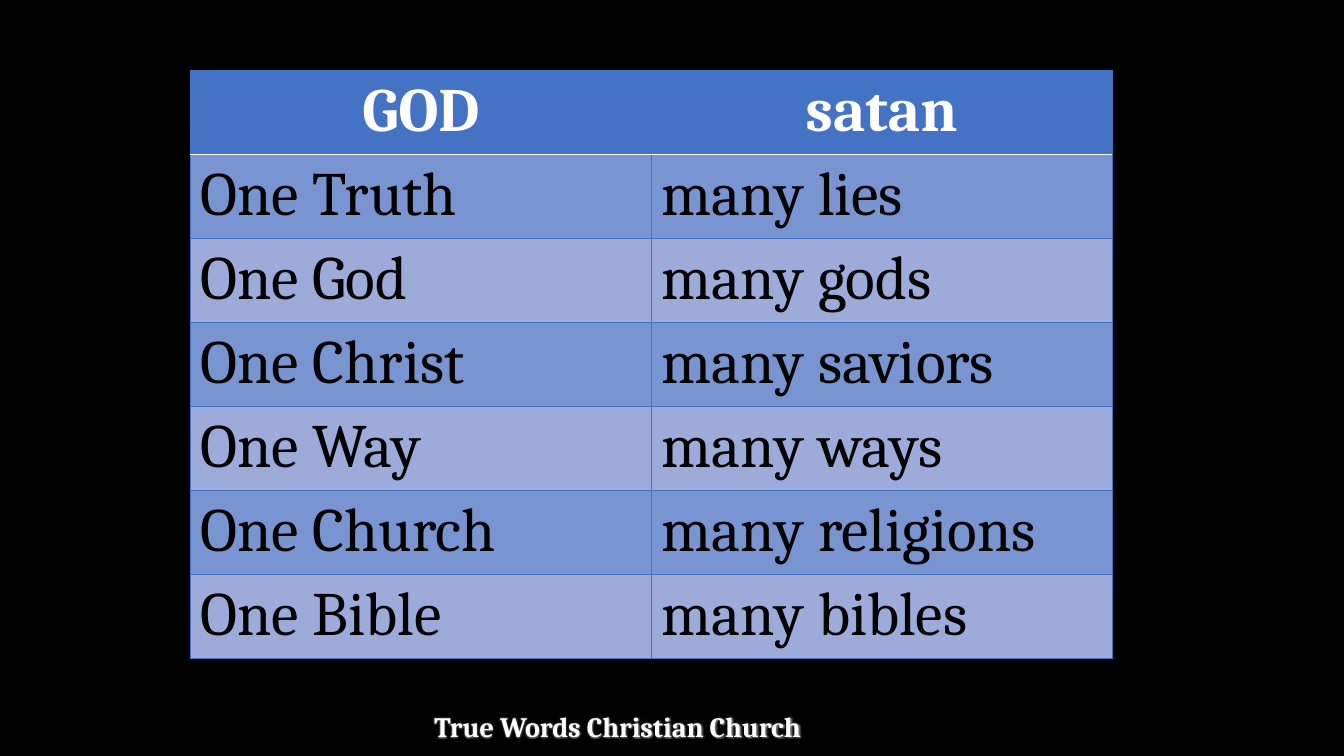
from typing import NamedTuple

from lxml import etree
from pptx import Presentation
from pptx.dml.color import RGBColor
from pptx.enum.text import PP_ALIGN
from pptx.oxml.ns import qn
from pptx.util import Inches, Pt

CENTER, LEFT = PP_ALIGN.CENTER, PP_ALIGN.LEFT
BLANK_LAYOUT = 6
FONT = "Cambria"
COLORS = {
    "background": "000000",
    "header": "4472C4",
    "dark_band": "7995D1",
    "light_band": "9CABDA",
    "white": "FFFFFF",
    "black": "000000",
    "glow": "808080",
}


class Contrast(NamedTuple):
    god: str
    satan: str


class Border(NamedTuple):
    side: str
    color: str
    points: float


HEADINGS = Contrast("GOD", "satan")
CONTRASTS = [
    Contrast("One Truth", "many lies"),
    Contrast("One God", "many gods"),
    Contrast("One Christ", "many saviors"),
    Contrast("One Way", "many ways"),
    Contrast("One Church", "many religions"),
    Contrast("One Bible", "many bibles"),
]


def rgb(name: str) -> RGBColor:
    return RGBColor.from_string(COLORS[name])


def write(frame, text: str, size: int, color: str, bold: bool, align) -> None:
    frame.text = text
    paragraph = frame.paragraphs[0]
    paragraph.alignment = align
    font = paragraph.runs[0].font
    font.name, font.size, font.bold = FONT, Pt(size), bold
    font.color.rgb = rgb(color)


def add_border(cell, border: Border, position: int) -> None:
    line = etree.Element(qn(f"a:ln{border.side}"), w=str(Pt(border.points)))
    fill = etree.SubElement(line, qn("a:solidFill"))
    etree.SubElement(fill, qn("a:srgbClr"), val=COLORS[border.color])
    cell._tc.get_or_add_tcPr().insert(position, line)


def fill_row(table, row: int, contrast: Contrast) -> None:
    is_header = row == 0
    band = "header" if is_header else "dark_band" if row % 2 else "light_band"
    top = Border("T", "white", 1) if row == 1 else Border("T", "header", 0.5)
    bottom = Border("B", "white", 1) if is_header else Border("B", "header", 0.5)
    borders = [Border("L", "header", 0.5), Border("R", "header", 0.5), top, bottom]
    for column, text in enumerate(contrast):
        cell = table.cell(row, column)
        write(cell.text_frame, text, 44, "white" if is_header else "black",
              is_header, CENTER if is_header else LEFT)
        cell.fill.solid()
        cell.fill.fore_color.rgb = rgb(band)
        for position, border in enumerate(borders):
            add_border(cell, border, position)


def add_contrast_table(slide) -> None:
    rows = [HEADINGS, *CONTRASTS]
    table = slide.shapes.add_table(
        len(rows), len(HEADINGS), Inches(1.89), Inches(0.7), Inches(9.14), Inches(5.83)
    ).table
    for row, contrast in enumerate(rows):
        fill_row(table, row, contrast)


def add_church_name(slide) -> None:
    church = slide.shapes.add_textbox(Inches(4.21), Inches(6.99), Inches(4.49), Inches(0.44))
    church.text_frame.word_wrap = True
    write(church.text_frame, "True Words Christian Church", 20, "white", True, LEFT)
    # Soft grey halo, placed right after the text fill
    run_fill = church.text_frame.paragraphs[0].runs[0]._r.rPr.find(qn("a:solidFill"))
    effects = etree.Element(qn("a:effectLst"))
    glow = etree.SubElement(effects, qn("a:glow"), rad=str(Pt(3)))
    etree.SubElement(glow, qn("a:srgbClr"), val=COLORS["glow"])
    run_fill.addnext(effects)


def main() -> None:
    deck = Presentation()
    deck.slide_width, deck.slide_height = Inches(13.33), Inches(7.5)
    slide = deck.slides.add_slide(deck.slide_layouts[BLANK_LAYOUT])
    slide.background.fill.solid()
    slide.background.fill.fore_color.rgb = rgb("background")
    add_church_name(slide)
    add_contrast_table(slide)
    deck.save("out.pptx")


if __name__ == "__main__":
    main()
